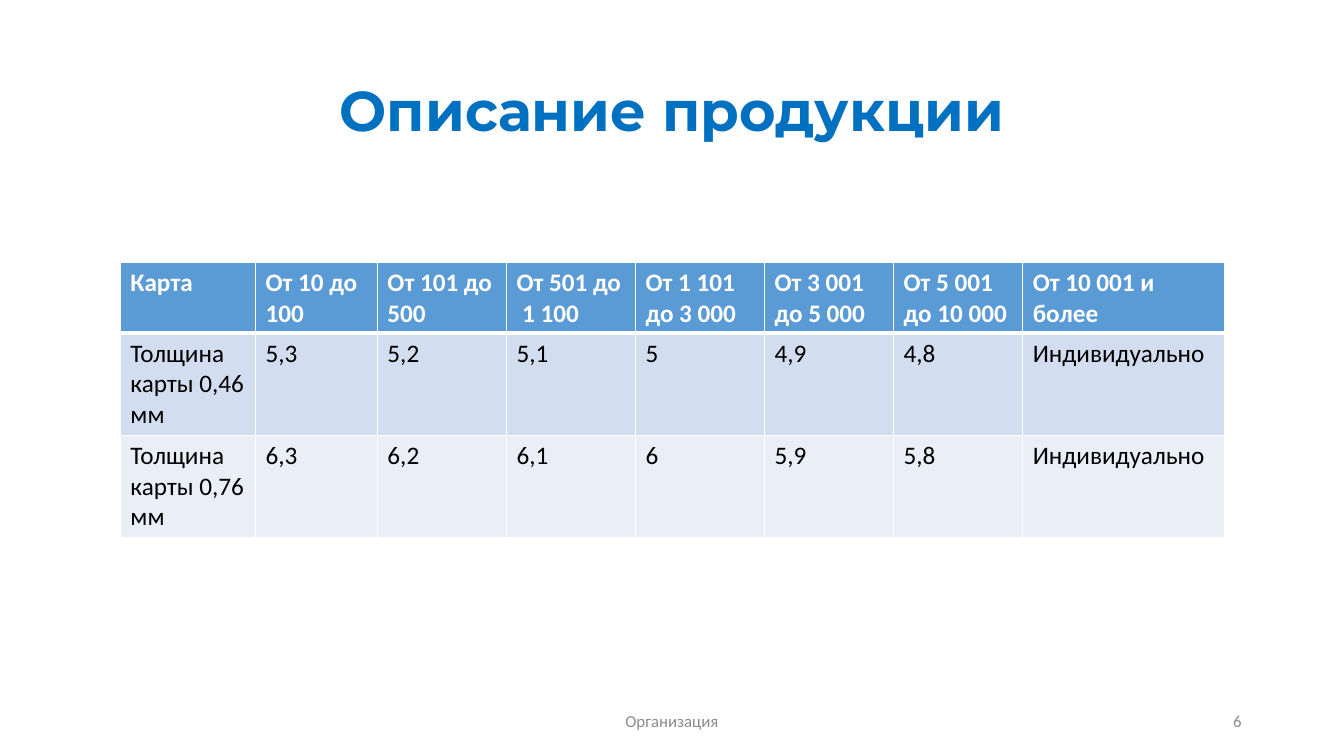
from dataclasses import dataclass

import pptx
import pptx.dml.color
import pptx.enum.text
import pptx.oxml
import pptx.oxml.ns
import pptx.util

Pt = pptx.util.Pt
Align = pptx.enum.text.PP_ALIGN
Anchor = pptx.enum.text.MSO_ANCHOR


@dataclass(frozen=True)
class Theme:
    title_font: str = "Montserrat"
    body_font: str = "Calibri"
    title_size: float = 40
    table_size: float = 18
    footer_size: float = 12
    title: str = "0070C0"
    header_fill: str = "5B9BD5"
    header_text: str = "FFFFFF"
    body_text: str = "000000"
    bands: tuple = ("D2DEEF", "EAEFF7")
    border: str = "FFFFFF"
    footer: str = "8C8C8C"


THEME = Theme()

PRICES = [
    ["Карта", "От 10 до 100", "От 101 до 500", "От 501 до  1 100", "От 1 101 до 3 000",
     "От 3 001 до 5 000", "От 5 001 до 10 000", "От 10 001 и более"],
    ["Толщина карты 0,46 мм", "5,3", "5,2", "5,1", "5", "4,9", "4,8", "Индивидуально"],
    ["Толщина карты 0,76 мм", "6,3", "6,2", "6,1", "6", "5,9", "5,8", "Индивидуально"],
]
COLUMN_WIDTHS = [96.5, 87.1] + [92.2] * 5 + [144]
ROW_HEIGHTS = [50.4, 73, 73]


def rgb(colour):
    return pptx.dml.color.RGBColor.from_string(colour)


def write(frame, text, *, size, colour, font=THEME.body_font, bold=False,
          align=Align.LEFT, spacing=None):
    paragraph = frame.paragraphs[0]
    paragraph.alignment = align
    if spacing:
        paragraph.line_spacing = spacing
    run = paragraph.add_run()
    run.text = text
    run.font.name = font
    run.font.size = Pt(size)
    run.font.bold = bold
    run.font.color.rgb = rgb(colour)


def add_label(slide, box, text, **text_format):
    """Add a wrapped, vertically centred text box."""
    frame = slide.shapes.add_textbox(*map(Pt, box)).text_frame
    frame.word_wrap = True
    frame.vertical_anchor = Anchor.MIDDLE
    write(frame, text, **text_format)


def set_borders(cell, bottom=1, top=1):
    """Draw the four cell borders, placed ahead of the fill as the schema asks."""
    properties = cell._tc.get_or_add_tcPr()
    widths = {"lnL": 1, "lnR": 1, "lnT": top, "lnB": bottom}
    for position, (side, width) in enumerate(widths.items()):
        line = pptx.oxml.parse_xml(
            f'<a:{side} {pptx.oxml.ns.nsdecls("a")} w="{Pt(width)}"><a:solidFill>'
            f'<a:srgbClr val="{THEME.border}"/></a:solidFill></a:{side}>')
        properties.insert(position, line)


def add_title(slide, box):
    add_label(slide, box, "Описание продукции", size=THEME.title_size,
              colour=THEME.title, font=THEME.title_font, bold=True,
              align=Align.CENTER, spacing=0.9)


def add_price_table(slide, left, top):
    table = slide.shapes.add_table(
        len(PRICES), len(COLUMN_WIDTHS), Pt(left), Pt(top),
        Pt(sum(COLUMN_WIDTHS)), Pt(sum(ROW_HEIGHTS))).table
    for column, width in zip(table.columns, COLUMN_WIDTHS):
        column.width = Pt(width)
    for row, height in zip(table.rows, ROW_HEIGHTS):
        row.height = Pt(height)

    for row_index, prices in enumerate(PRICES):
        header = row_index == 0
        fill = THEME.header_fill if header else THEME.bands[(row_index - 1) % 2]
        for column_index, text in enumerate(prices):
            cell = table.cell(row_index, column_index)
            cell.fill.solid()
            cell.fill.fore_color.rgb = rgb(fill)
            set_borders(cell, bottom=3 if header else 1, top=3 if row_index == 1 else 1)
            write(cell.text_frame, text, size=THEME.table_size, bold=header,
                  colour=THEME.header_text if header else THEME.body_text)


def add_footer(slide, left, top, width, height):
    """Place the company in the middle of the box and the page number at its right."""
    style = dict(size=THEME.footer_size, colour=THEME.footer)
    company_width, number_width = 324, 216
    company_left = left + (width - company_width) / 2
    number_left = left + width - number_width
    add_label(slide, (company_left, top, company_width, height), "Организация",
              align=Align.CENTER, **style)
    add_label(slide, (number_left, top, number_width, height), "6",
              align=Align.RIGHT, **style)


def main():
    deck = pptx.Presentation()
    deck.slide_width, deck.slide_height = Pt(960), Pt(540)
    slide = deck.slides.add_slide(deck.slide_layouts[6])
    add_title(slide, (66, 28.75, 828, 104.4))
    add_price_table(slide, 86, 187.5)
    add_footer(slide, 66, 500.5, 828, 28.75)
    deck.save("out.pptx")


if __name__ == "__main__":
    main()
